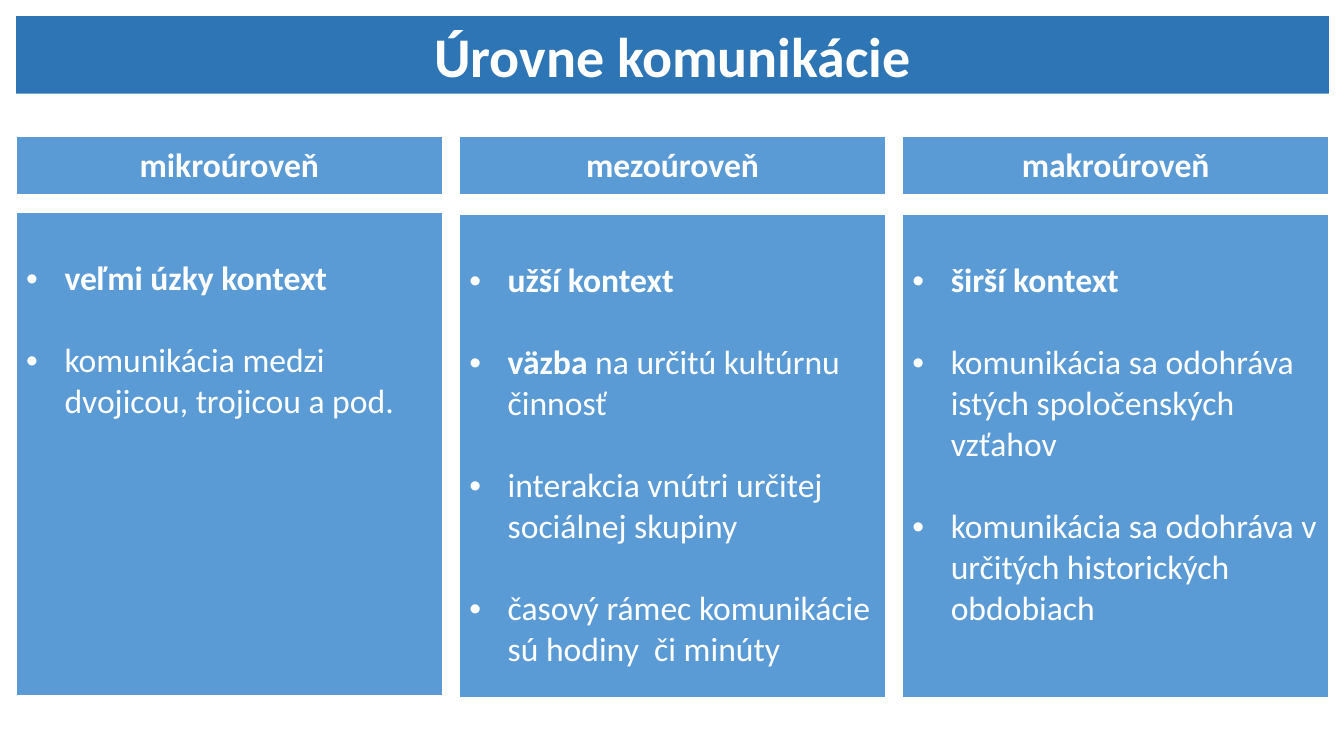
from lxml.etree import SubElement
from pptx import Presentation
from pptx.dml.color import RGBColor
from pptx.enum.shapes import MSO_SHAPE
from pptx.enum.text import MSO_ANCHOR as Anchor, PP_ALIGN as Align
from pptx.oxml.ns import qn
from pptx.util import Inches, Pt

COLORS = {"title": "2E75B6", "cell": "5B9BD5", "white": "FFFFFF"}
FONT = "Calibri"
LEFT, SPAN, COLUMN_WIDTH = 0.16, 13.02, 4.23
HEADING_TOP, HEADING_HEIGHT, BODY_HEIGHT = 1.35, 0.59, 4.8
LINE_PT = 29.3  # height of one 24 pt line
INDENT = Inches(0.38)
BORDERS = {"a:lnL": 1, "a:lnR": 1, "a:lnT": 1, "a:lnB": 3}

# Heading, top of the body, bullets made of (text, bold) runs
LEVELS = [
    ("mikroúroveň", 2.11, [
        [("veľmi úzky kontext", True)],
        [("komunikácia medzi dvojicou, trojicou a pod.", False)],
    ]),
    ("mezoúroveň", 2.13, [
        [("užší kontext", True)],
        [("väzba", True), (" na určitú kultúrnu činnosť", False)],
        [("interakcia vnútri určitej sociálnej skupiny", False)],
        [("časový rámec komunikácie sú hodiny  či minúty", False)],
    ]),
    ("makroúroveň", 2.13, [
        [("širší kontext", True)],
        [("komunikácia sa odohráva istých spoločenských vzťahov", False)],
        [("komunikácia sa odohráva v určitých historických obdobiach", False)],
    ]),
]


def rgb(name):
    return RGBColor.from_string(COLORS[name])


def add_run(paragraph, text, bold=True, size=24):
    run = paragraph.add_run()
    run.text = text
    text_format = {"name": FONT, "size": Pt(size), "bold": bold}
    for attribute, value in text_format.items():
        setattr(run.font, attribute, value)
    run.font.color.rgb = rgb("white")


def add_title(slide, text):
    shape = slide.shapes.add_shape(
        MSO_SHAPE.RECTANGLE, Inches(LEFT), Inches(0.16), Inches(SPAN), Inches(0.77))
    shape.shadow.inherit = False
    shape.fill.solid()
    shape.fill.fore_color.rgb = rgb("title")
    shape.line.fill.background()
    paragraph = shape.text_frame.paragraphs[0]
    paragraph.alignment = Align.CENTER
    add_run(paragraph, text, size=40)


def set_borders(cell):
    properties = cell._tc.get_or_add_tcPr()
    for position, (tag, width) in enumerate(BORDERS.items()):
        line = SubElement(properties, qn(tag), w=str(Pt(width)))
        fill = SubElement(line, qn("a:solidFill"))
        SubElement(fill, qn("a:srgbClr"), val=COLORS["white"])
        properties.insert(position, line)


def add_panel(slide, left, top, height):
    """Add a table of one cell and return the cell."""
    table = slide.shapes.add_table(
        1, 1, Inches(left), Inches(top), Inches(COLUMN_WIDTH), Inches(height)).table
    table.first_row = table.horz_banding = False
    cell = table.cell(0, 0)
    cell.fill.solid()
    cell.fill.fore_color.rgb = rgb("cell")
    set_borders(cell)
    return cell


def add_heading(slide, left, text):
    cell = add_panel(slide, left, HEADING_TOP, HEADING_HEIGHT)
    cell.vertical_anchor = Anchor.MIDDLE
    paragraph = cell.text_frame.paragraphs[0]
    paragraph.alignment = Align.CENTER
    add_run(paragraph, text)


def set_bullet(paragraph):
    properties = paragraph._p.get_or_add_pPr()
    properties.set("marL", str(INDENT))
    properties.set("indent", str(-INDENT))
    SubElement(properties, qn("a:buFont"), typeface="Arial")
    SubElement(properties, qn("a:buChar"), char="•")


def add_body(slide, left, top, bullets):
    cell = add_panel(slide, left, top, BODY_HEIGHT)
    cell.margin_top = Inches(0.05) + Pt(LINE_PT)
    frame = cell.text_frame
    for index, runs in enumerate(bullets):
        paragraph = frame.add_paragraph() if index else frame.paragraphs[0]
        if index:
            paragraph.space_before = Pt(LINE_PT)
        set_bullet(paragraph)
        for text, bold in runs:
            add_run(paragraph, text, bold)


def main():
    presentation = Presentation()
    presentation.slide_width = Inches(13.33)
    presentation.slide_height = Inches(7.5)
    slide = presentation.slides.add_slide(presentation.slide_layouts[6])

    add_title(slide, "Úrovne komunikácie")

    # Three equal columns across the width of the title
    pitch = (SPAN - COLUMN_WIDTH) / (len(LEVELS) - 1)
    for index, (heading, body_top, bullets) in enumerate(LEVELS):
        left = LEFT + index * pitch
        add_heading(slide, left, heading)
        add_body(slide, left, body_top, bullets)

    presentation.save("out.pptx")


if __name__ == "__main__":
    main()
